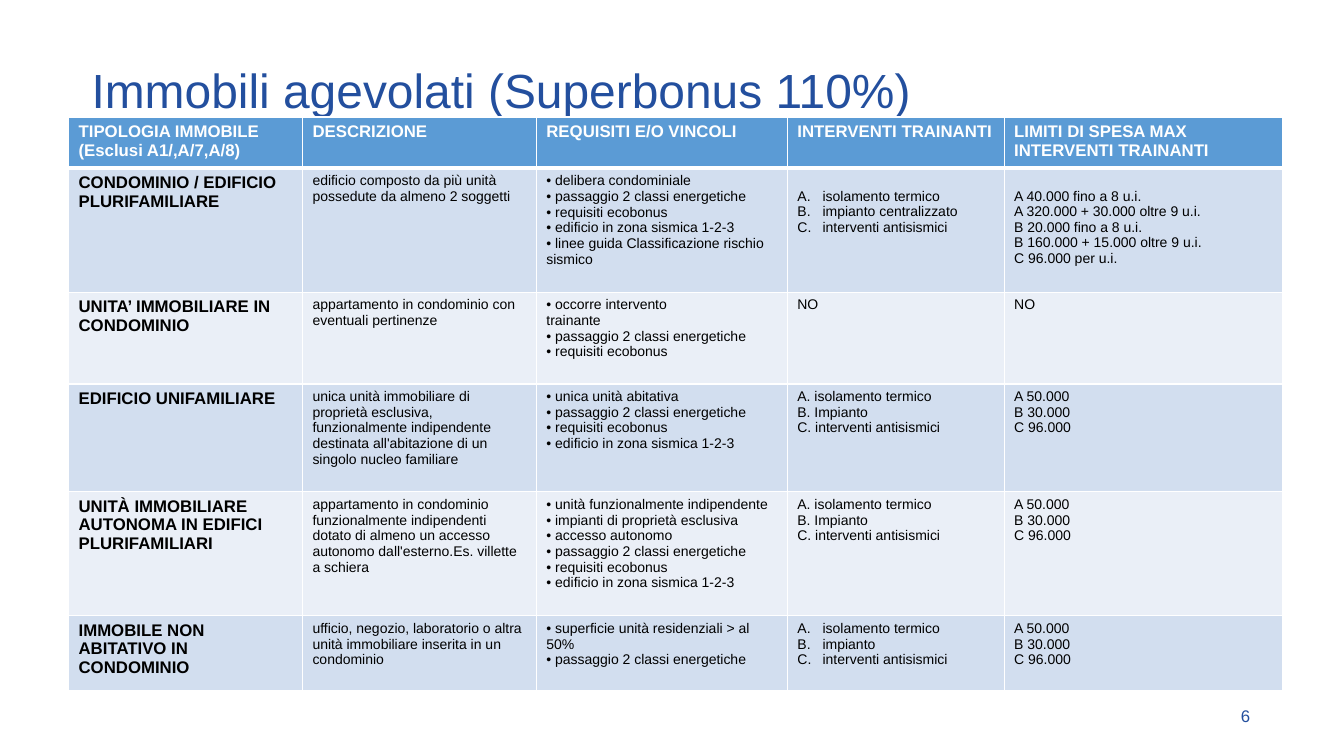
from lxml.etree import SubElement
from pptx import Presentation
from pptx.dml.color import RGBColor
from pptx.enum.text import MSO_ANCHOR
from pptx.oxml.ns import qn
from pptx.util import Inches, Pt

BLUE, WHITE, BLACK = "234F9E", "FFFFFF", "000000"
HEAD, DARK, LIGHT = "5B9BD5", "D2DEEF", "EAEFF7"
COLS = [2.32, 2.32, 2.49, 2.15, 2.76]
ROWS = [0.51, 1.23, 0.91, 1.07, 1.23, 0.74]

CLASS = "• passaggio 2 classi energetiche"
ECO = "• requisiti ecobonus"
ZONE = "• edificio in zona sismica 1-2-3"
WORKS = ["A. isolamento termico", "B. Impianto", "C. interventi antisismici"]
LIMITS = ["A 50.000", "B 30.000", "C 96.000"]
DATA = [
    [["TIPOLOGIA IMMOBILE", "(Esclusi A1/,A/7,A/8)"], ["DESCRIZIONE"],
     ["REQUISITI E/O VINCOLI"], ["INTERVENTI TRAINANTI"],
     ["LIMITI DI SPESA MAX INTERVENTI TRAINANTI"]],
    [["CONDOMINIO / EDIFICIO PLURIFAMILIARE"],
     ["edificio composto da più unità possedute da almeno 2 soggetti"],
     ["• delibera condominiale", CLASS, ECO, ZONE,
      "• linee guida Classificazione rischio sismico"],
     ["isolamento termico", "impianto centralizzato", "interventi antisismici"],
     ["A 40.000 fino a 8 u.i.", "A 320.000 + 30.000 oltre 9 u.i.",
      "B 20.000 fino a 8 u.i.", "B 160.000 + 15.000 oltre 9 u.i.",
      "C 96.000 per u.i."]],
    [["UNITA’ IMMOBILIARE IN CONDOMINIO"],
     ["appartamento in condominio con eventuali pertinenze"],
     ["• occorre intervento", "trainante", CLASS, ECO], ["NO"], ["NO"]],
    [["EDIFICIO UNIFAMILIARE"],
     ["unica unità immobiliare di proprietà esclusiva, funzionalmente "
      "indipendente destinata all'abitazione di un singolo nucleo familiare"],
     ["• unica unità abitativa", CLASS, ECO, ZONE], WORKS, LIMITS],
    [["UNITÀ IMMOBILIARE AUTONOMA IN EDIFICI PLURIFAMILIARI"],
     ["appartamento in condominio funzionalmente indipendenti dotato di almeno "
      "un accesso autonomo dall'esterno.Es. villette a schiera"],
     ["• unità funzionalmente indipendente", "• impianti di proprietà esclusiva",
      "• accesso autonomo", CLASS, ECO, ZONE], WORKS, LIMITS],
    [["IMMOBILE NON ABITATIVO IN CONDOMINIO"],
     ["ufficio, negozio, laboratorio o altra unità immobiliare inserita in un "
      "condominio"],
     ["• superficie unità residenziali > al 50%", CLASS],
     ["isolamento termico", "impianto", "interventi antisismici"], LIMITS],
]
LISTS = {(1, 3), (5, 3)}
LOWER = {(1, 3), (1, 4)}


def paint(item, tint):
    item.rgb = RGBColor.from_string(tint)


def write(frame, lines, size=10, color=BLACK, bold=False, space=1.0, letters=False):
    frame.word_wrap = True
    for i, line in enumerate(lines):
        para = frame.paragraphs[0] if i == 0 else frame.add_paragraph()
        para.line_spacing = space
        if letters:
            props = para._p.get_or_add_pPr()
            props.set("marL", str(Inches(0.25)))
            props.set("indent", str(-Inches(0.25)))
            SubElement(props, qn("a:buFont"), typeface="+mj-lt")
            SubElement(props, qn("a:buAutoNum"), type="alphaUcPeriod")
        run = para.add_run()
        run.text = line
        font = run.font
        font.name, font.size, font.bold = "Arial", Pt(size), bold
        paint(font.color, color)


def label(slide, text, left, top, width, height, **style):
    box = slide.shapes.add_textbox(*map(Inches, (left, top, width, height)))
    box.text_frame.vertical_anchor = MSO_ANCHOR.MIDDLE
    write(box.text_frame, [text], **style)


def edge(cell, row):
    props = cell._tc.get_or_add_tcPr()
    widths = {"L": 1, "R": 1, "T": 3 if row == 1 else 1, "B": 3 if row == 0 else 1}
    for i, (side, width) in enumerate(widths.items()):
        line = SubElement(props, qn("a:ln" + side), w=str(Pt(width)))
        fill = SubElement(line, qn("a:solidFill"))
        SubElement(fill, qn("a:srgbClr"), val=WHITE)
        props.insert(i, line)


def fill_cell(cell, lines, row, col):
    cell.fill.solid()
    paint(cell.fill.fore_color, HEAD if row == 0 else DARK if row % 2 else LIGHT)
    edge(cell, row)
    if (row, col) in LOWER:
        cell.margin_top = Inches(0.2)
    strong = row == 0 or col == 0
    write(cell.text_frame, lines, size=12 if strong else 10, bold=strong,
          color=WHITE if row == 0 else BLACK, letters=(row, col) in LISTS)


def grid(slide):
    frame = slide.shapes.add_table(len(ROWS), len(COLS), Inches(0.68), Inches(1.16),
                                   Inches(sum(COLS)), Inches(sum(ROWS)))
    table = frame.table
    for col, width in zip(table.columns, COLS):
        col.width = Inches(width)
    for row, height in zip(table.rows, ROWS):
        row.height = Inches(height)
    for r, row in enumerate(DATA):
        for c, lines in enumerate(row):
            fill_cell(table.cell(r, c), lines, r, c)


def main():
    deck = Presentation()
    deck.slide_width, deck.slide_height = Inches(13.33), Inches(7.5)
    slide = deck.slides.add_slide(deck.slide_layouts[6])
    label(slide, "6", 12.21, 6.95, 0.84, 0.3, size=12, color=BLUE)
    label(slide, "Immobili agevolati (Superbonus 110%)", 0.81, 0.62, 11.5, 0.6,
          size=34.2, color=BLUE, space=0.9)
    grid(slide)
    deck.save("out.pptx")


if __name__ == "__main__":
    main()
